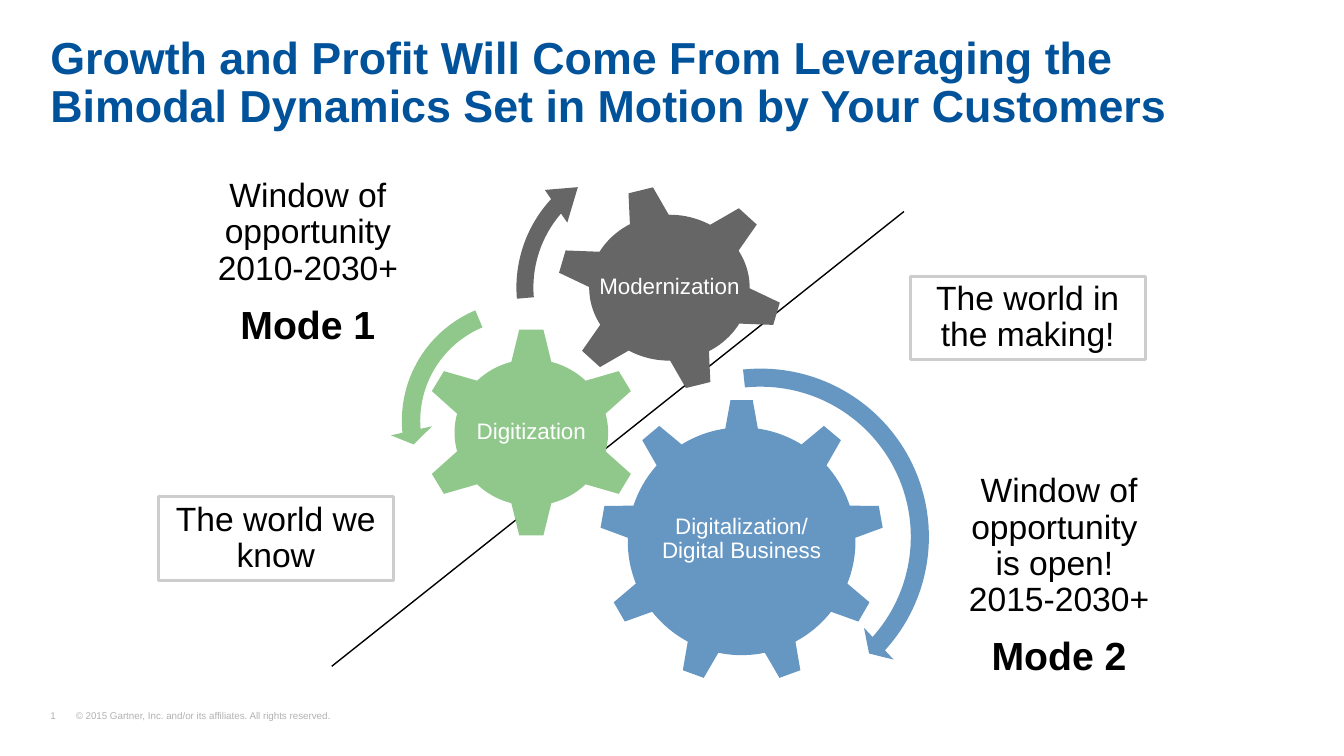
from math import atan2, cos, hypot, pi, radians, sin

from lxml import etree
from pptx import Presentation
from pptx.dml.color import RGBColor
from pptx.enum.shapes import MSO_CONNECTOR, MSO_SHAPE
from pptx.enum.text import MSO_ANCHOR, PP_ALIGN
from pptx.oxml.ns import qn
from pptx.util import Cm, Pt

LEFT, CENTER = PP_ALIGN.LEFT, PP_ALIGN.CENTER
TOP, MIDDLE, BOTTOM = MSO_ANCHOR.TOP, MSO_ANCHOR.MIDDLE, MSO_ANCHOR.BOTTOM
RECTANGLE, STRAIGHT = MSO_SHAPE.RECTANGLE, MSO_CONNECTOR.STRAIGHT
CLOCKWISE, COUNTERCLOCKWISE = MSO_SHAPE.CIRCULAR_ARROW, MSO_SHAPE.LEFT_CIRCULAR_ARROW

COLORS = {
    "title": "00529B", "text": "000000", "footer": "B2B2B2", "white": "FFFFFF",
    "frame": "CDCDCD", "digitalization": "6697C3", "digitization": "90C88C",
    "modernization": "666666",
}
PADDING = (0.25, 0.13, 0.25, 0.13)


class BimodalSlide:
    """Draws the elements of the bimodal slide in one shared style."""

    def __init__(self, slide, font="Arial"):
        self.slide = slide
        self.shapes = slide.shapes
        self.font = font

    def color(self, name):
        return RGBColor.from_string(COLORS[name])

    def paint(self, shape, fill, outline=None):
        shape.shadow.inherit = False
        shape.fill.solid()
        shape.fill.fore_color.rgb = self.color(fill)
        if outline:
            shape.line.color.rgb = self.color(outline)
            shape.line.width = Pt(2)
        else:
            shape.line.fill.background()

    def fill_text(self, shape, lines, color="text", align=CENTER, anchor=TOP,
                  padding=PADDING, tab=None):
        frame = shape.text_frame
        frame.word_wrap = True
        frame.vertical_anchor = anchor
        (frame.margin_left, frame.margin_top,
         frame.margin_right, frame.margin_bottom) = map(Cm, padding)
        for index, (words, size, bold) in enumerate(lines):
            paragraph = frame.add_paragraph() if index else frame.paragraphs[0]
            paragraph.text = words
            paragraph.alignment = align
            paragraph.line_spacing = 0.9
            if index:
                paragraph.space_before = Pt(13)
            if tab:
                stops = etree.SubElement(paragraph._p.get_or_add_pPr(), qn("a:tabLst"))
                etree.SubElement(stops, qn("a:tab"), pos=str(Cm(tab)), algn="l")
            paragraph.font.name = self.font
            paragraph.font.size = Pt(size)
            paragraph.font.bold = bold
            paragraph.font.color.rgb = self.color(color)

    def text(self, place, lines, **style):
        self.fill_text(self.shapes.add_textbox(*map(Cm, place)), lines, **style)

    def framed(self, left, top, words):
        box = self.shapes.add_shape(RECTANGLE, Cm(left), Cm(top), Cm(5.92), Cm(2.11))
        self.paint(box, "white", "frame")
        self.fill_text(box, [(words, 24, False)])

    def divider(self, start, end):
        line = self.shapes.add_connector(STRAIGHT, *map(Cm, (*start, *end)))
        line.line.color.rgb = self.color("text")
        line.line.width = Pt(1)
        etree.SubElement(line._element.spPr, qn("a:effectLst"))

    def gear(self, center, teeth, base, tip, color, label, start=0, stretch=1):
        """Draw a gear; base and tip hold a tooth's half width and distance from the center."""
        (base_half, base_reach), (tip_half, tip_reach) = base, tip
        body = hypot(base_half, base_reach)
        flank = atan2(base_half, base_reach)
        pitch = 2 * pi / teeth
        tooth = [(-flank, body), (atan2(-tip_half, tip_reach), hypot(tip_half, tip_reach)),
                 (atan2(tip_half, tip_reach), hypot(tip_half, tip_reach))]
        steps = 10
        rim = [(flank + (pitch - 2 * flank) * step / steps, body) for step in range(steps)]
        outline = []
        for number in range(teeth):
            turn = radians(start) + number * pitch
            for angle, radius in tooth + rim:
                outline.append((Cm(center[0] + stretch * radius * sin(turn + angle)),
                                Cm(center[1] - radius * cos(turn + angle))))
        builder = self.shapes.build_freeform(*outline[0], scale=1.0)
        builder.add_line_segments(outline[1:], close=True)
        gear = builder.convert_to_shape()
        self.paint(gear, color)
        self.fill_text(gear, [(label, 16, False)], color="white", anchor=MIDDLE,
                       padding=(0.6, 0.6, 0.6, 0.6))

    def motion(self, kind, left, top, size, adjustments, color):
        arrow = self.shapes.add_shape(kind, Cm(left), Cm(top), Cm(size), Cm(size))
        for index, value in enumerate(adjustments):
            arrow.adjustments[index] = value
        self.paint(arrow, color)


def main():
    deck = Presentation()
    deck.slide_width, deck.slide_height = Cm(33.87), Cm(19.05)
    page = BimodalSlide(deck.slides.add_slide(deck.slide_layouts[6]))

    page.text((1.27, 17.91, 8.51, 0.28),
              [("1\t© 2015 Gartner, Inc. and/or its affiliates. All rights reserved.", 7, False)],
              color="footer", align=LEFT, anchor=BOTTOM, padding=(0, 0, 0, 0), tab=0.64)
    page.text((1.27, 0.64, 31.32, 2.72),
              [("Growth and Profit Will Come From Leveraging the "
                "Bimodal Dynamics Set in Motion by Your Customers", 32, True)],
              color="title", align=LEFT, padding=(0, 0.25, 0, 0))

    page.divider((8.36, 16.79), (22.78, 5.33))
    page.gear((18.69, 13.64), 9, (0.41, 2.84), (0.28, 3.56),
              "digitalization", "Digitalization/\nDigital Business")
    page.gear((13.39, 10.9), 6, (0.48, 1.78), (0.29, 2.59),
              "digitization", "Digitization", stretch=1.05)
    page.gear((16.87, 7.25), 6, (0.46, 1.78), (0.29, 2.54),
              "modernization", "Modernization", start=45, stretch=1.1)

    page.motion(CLOCKWISE, 14.61, 8.97, 9.12,
                (0.05, 2.99, 25.26, 158.4, 0.06), "digitalization")
    page.motion(COUNTERCLOCKWISE, 9.83, 7.29, 6.63,
                (0.07, 4.3, 104.89, 148.38, 0.08), "digitization")
    page.motion(CLOCKWISE, 12.73, 3.68, 7.14,
                (0.06, 8.2, 133.14, 105.08, 0.07), "modernization")

    page.text((4.57, 4.37, 6.38, 4.57),
              [("Window of opportunity 2010-2030+", 24, False), ("Mode 1", 28, True)])
    page.text((23.5, 11.81, 6.38, 5.49),
              [("Window of opportunity \nis open! \n2015-2030+", 24, False),
               ("Mode 2", 28, True)])
    page.framed(3.99, 12.52, "The world we know")
    page.framed(22.94, 6.96, "The world in the making!")

    deck.save("out.pptx")


if __name__ == "__main__":
    main()
